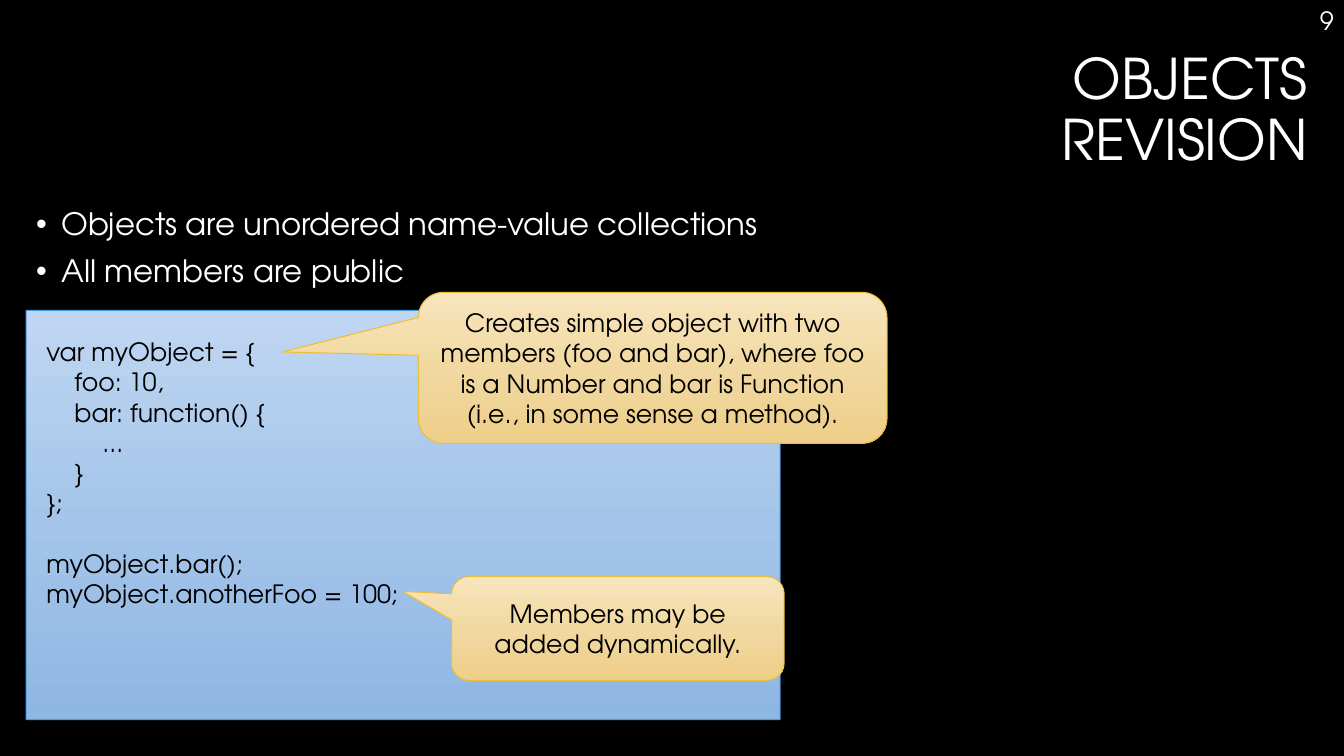
from copy import deepcopy
from dataclasses import dataclass

from lxml.etree import SubElement
from pptx import Presentation
from pptx.dml.color import RGBColor
from pptx.enum.shapes import MSO_SHAPE
from pptx.enum.text import MSO_ANCHOR, PP_ALIGN
from pptx.oxml.ns import qn
from pptx.util import Pt


@dataclass(frozen=True)
class Theme:
    font: str = "TeX Gyre Adventor"
    background: str = "000000"
    light_text: str = "FFFFFF"
    dark_text: str = "000000"
    code_fill: tuple = ("BFD6F2", "A4C4E9", "8FB7E4")
    code_line: str = "4A9BDC"
    callout_fill: tuple = ("F8E5BD", "F1D8A0", "EECF89")
    callout_line: str = "E9BF35"
    gradient_positions: tuple = (0, 0.52, 1)
    title_size: int = 40
    bullet_size: int = 22
    text_size: int = 18
    line_width: float = 0.75
    code_indent: float = 20
    code_gap: float = 21.6
    bullet_indent: float = 18


THEME = Theme()

BULLETS = ("Objects are unordered name-value collections", "All members are public")

CODE_BLOCKS = (
    (
        (0, "var myObject = {"),
        (1, "foo: 10,"),
        (1, "bar: function() {"),
        (2, "..."),
        (1, "}"),
        (0, "};"),
    ),
    ((0, "myObject.bar();"), (0, "myObject.anotherFoo = 100;")),
)

CALLOUTS = (
    (
        (298.8, 208.8, 334.8, 108),
        (-0.79, -0.105),
        "Creates simple object with two members (foo and bar), where foo "
        "is a Number and bar is Function (i.e., in some sense a method).",
    ),
    (
        (322.56, 411.84, 237.6, 74.16),
        (-0.647, -0.357),
        "Members may be added dynamically.",
    ),
)


def add_span(para, text, size, color):
    span = para.add_run()
    span.text = text
    span.font.name = THEME.font
    span.font.size = Pt(size)
    span.font.color.rgb = RGBColor.from_string(color)


def next_para(frame, index):
    return frame.add_paragraph() if index else frame.paragraphs[0]


def set_indent(para, left, first=0):
    properties = para._p.get_or_add_pPr()
    properties.set("marL", str(Pt(left)))
    properties.set("indent", str(Pt(first)))
    return properties


def add_text_frame(page, place):
    frame = page.shapes.add_textbox(*map(Pt, place)).text_frame
    frame.word_wrap = True
    return frame


def add_panel(page, kind, place, adjustments, colors, line):
    box = page.shapes.add_shape(kind, *map(Pt, place))
    box.shadow.inherit = False
    for index, value in enumerate(adjustments):
        box.adjustments[index] = value
    box.fill.gradient()
    box.fill.gradient_angle = 270
    stop_list = box.element.find(".//" + qn("a:gsLst"))
    stop_list.append(deepcopy(stop_list[-1]))
    stops = zip(box.fill.gradient_stops, THEME.gradient_positions, colors)
    for stop, position, color in stops:
        stop.position = position
        stop.color.rgb = RGBColor.from_string(color)
    box.line.color.rgb = RGBColor.from_string(line)
    box.line.width = Pt(THEME.line_width)
    box.text_frame.word_wrap = True
    return box.text_frame


def add_bullets(page):
    frame = add_text_frame(page, (18.72, 145.44, 922.32, 73.44))
    for index, text in enumerate(BULLETS):
        para = next_para(frame, index)
        para.line_spacing = 0.9
        para.space_before = Pt(10)
        properties = set_indent(para, THEME.bullet_indent, -THEME.bullet_indent)
        bullet_color = SubElement(properties, qn("a:buClr"))
        SubElement(bullet_color, qn("a:srgbClr"), val=THEME.light_text)
        SubElement(properties, qn("a:buFont"), typeface="Arial")
        SubElement(properties, qn("a:buChar"), char="•")
        add_span(para, text, THEME.bullet_size, THEME.light_text)


def add_right_text(page, place, lines, size, spacing):
    para = add_text_frame(page, place).paragraphs[0]
    para.alignment = PP_ALIGN.RIGHT
    para.line_spacing = spacing
    for index, text in enumerate(lines):
        if index:
            para.add_line_break()
        add_span(para, text, size, THEME.light_text)


def add_code(page):
    frame = add_panel(
        page, MSO_SHAPE.SNIP_1_RECTANGLE, (18.72, 221.76, 538.56, 292.32),
        (0.049,), THEME.code_fill, THEME.code_line,
    )
    frame.vertical_anchor = MSO_ANCHOR.TOP
    frame.margin_left = frame.margin_right = frame.margin_bottom = Pt(14.4)
    frame.margin_top = Pt(11.52)
    for block_index, block in enumerate(CODE_BLOCKS):
        for line_index, (level, text) in enumerate(block):
            para = next_para(frame, block_index + line_index)
            para.alignment = PP_ALIGN.LEFT
            set_indent(para, level * THEME.code_indent)
            if block_index and not line_index:
                para.space_before = Pt(THEME.code_gap)
            add_span(para, text, THEME.text_size, THEME.dark_text)


def add_callout(page, place, tip, text):
    frame = add_panel(
        page, MSO_SHAPE.ROUNDED_RECTANGULAR_CALLOUT, place,
        (*tip, 0.167), THEME.callout_fill, THEME.callout_line,
    )
    frame.vertical_anchor = MSO_ANCHOR.MIDDLE
    para = frame.paragraphs[0]
    para.alignment = PP_ALIGN.CENTER
    add_span(para, text, THEME.text_size, THEME.dark_text)


def main():
    deck = Presentation()
    deck.slide_width, deck.slide_height = Pt(960), Pt(540)
    page = deck.slides.add_slide(deck.slide_layouts[6])
    page.background.fill.solid()
    page.background.fill.fore_color.rgb = RGBColor.from_string(THEME.background)
    add_bullets(page)
    add_right_text(
        page, (18.72, 33.12, 922.32, 101.52),
        ("OBJECTS", "REVISION"), THEME.title_size, 0.9,
    )
    add_right_text(page, (752.4, 0, 207.36, 28.8), ("9",), THEME.text_size, 1.0)
    add_code(page)
    for place, tip, text in CALLOUTS:
        add_callout(page, place, tip, text)
    deck.save("out.pptx")


if __name__ == "__main__":
    main()
